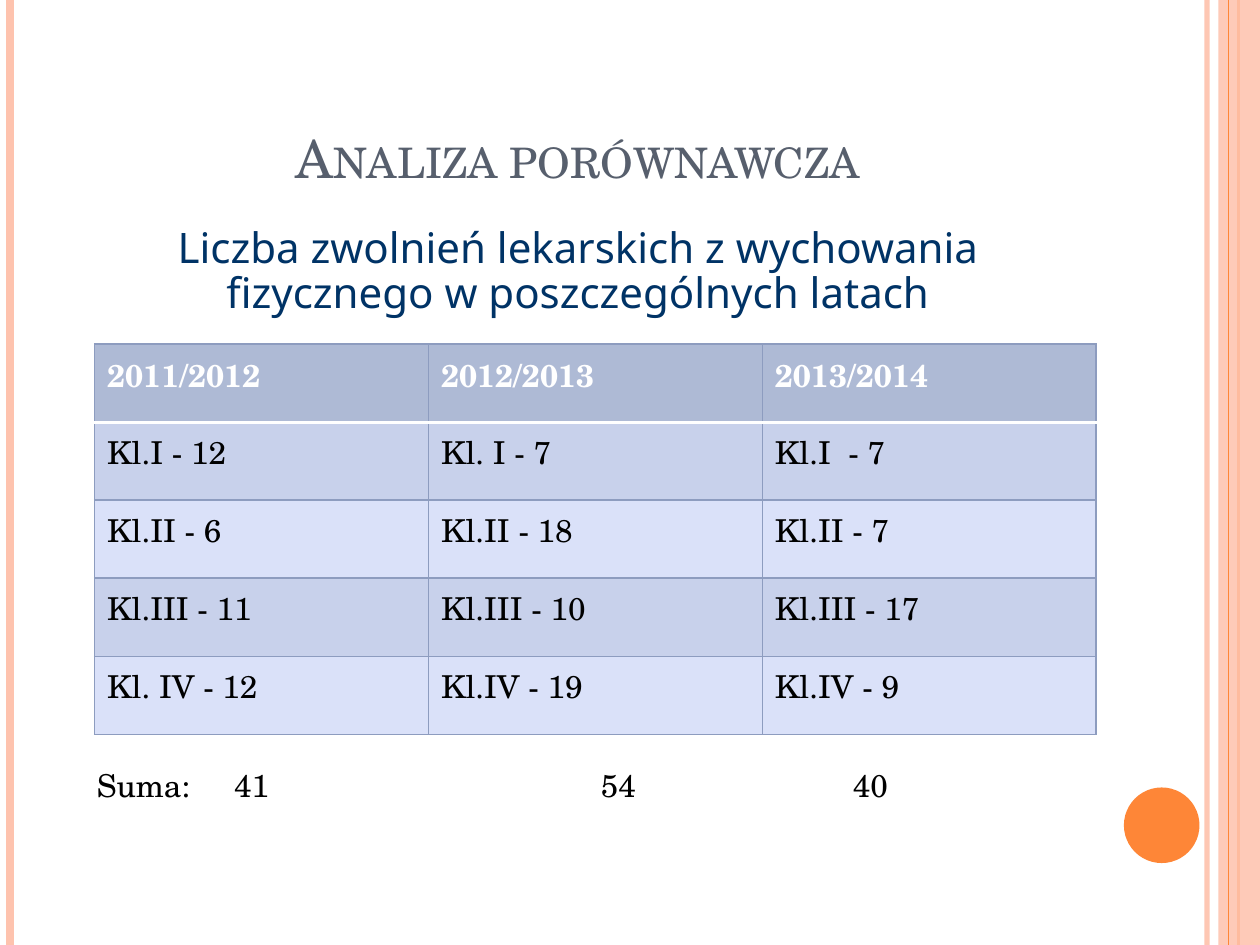
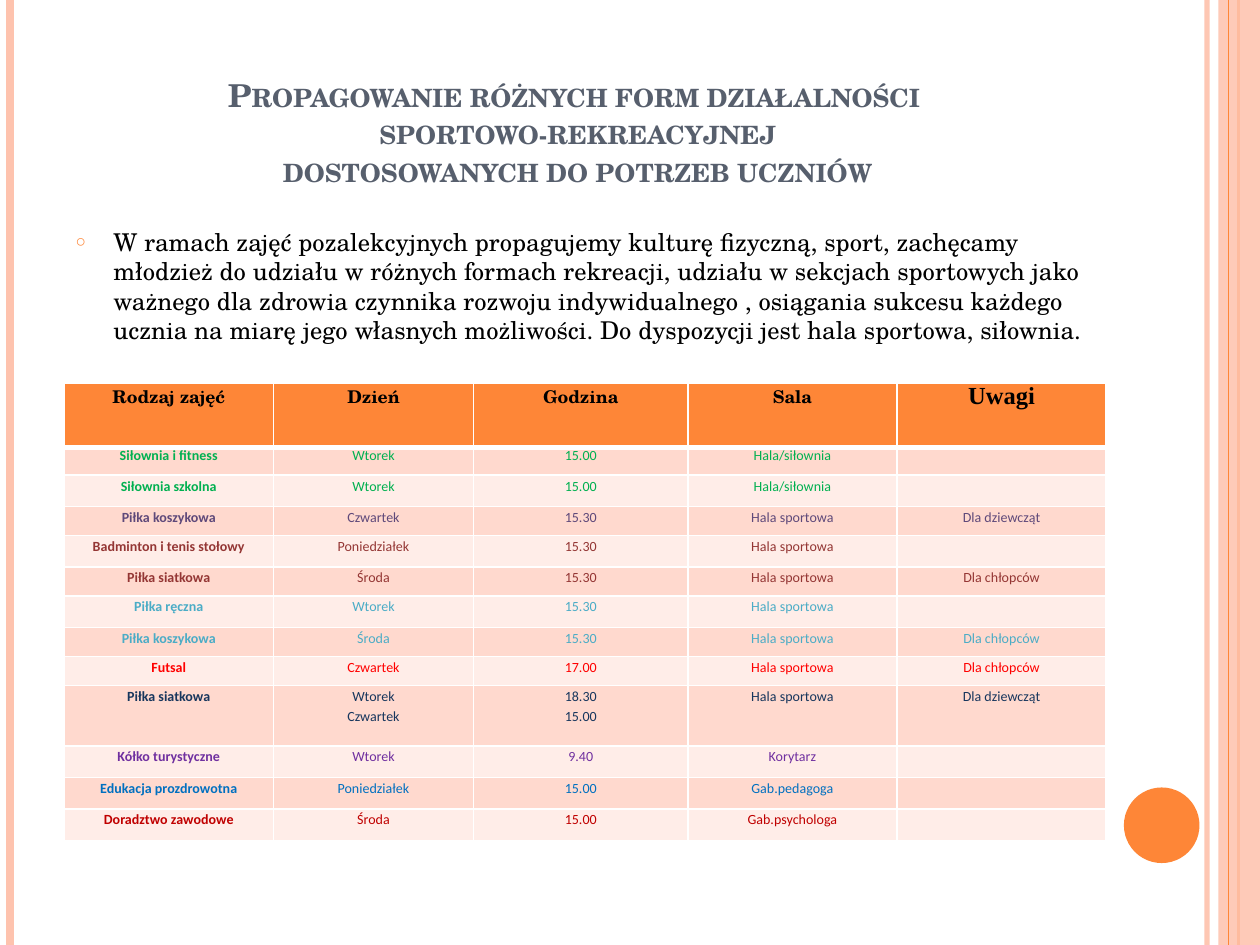
import pptx
import pptx.util
import pptx.dml.color
import pptx.enum.shapes
import pptx.enum.text
import pptx.oxml
import pptx.oxml.ns
from lxml import etree

Inches, Pt = pptx.util.Inches, pptx.util.Pt
qn = pptx.oxml.ns.qn
CENTER = pptx.enum.text.PP_ALIGN.CENTER
SERIF = "TeX Gyre Schola"
ORANGE, PEACH, SLATE = "FE8637", "FEC3AE", "575F6D"
BLUE, WHITE, BLACK = "8D9CBF", "FFFFFF", "000000"


def put(par, words, size, color, face=SERIF, bold=False):
    """Add one formatted run to a paragraph."""
    run = par.add_run()
    run.text = words
    run.font.size, run.font.name, run.font.bold = Pt(size), face, bold
    run.font.color.rgb = pptx.dml.color.RGBColor.from_string(color)
    return run


def dress(cell, fill, edges):
    """Fill a cell and draw its edges, given as {side: (colour, width)}."""
    cell.fill.solid()
    cell.fill.fore_color.rgb = pptx.dml.color.RGBColor.from_string(fill)
    props = cell._tc.get_or_add_tcPr()
    for n, side in enumerate(s for s in "LRTB" if s in edges):
        color, width = edges[side]
        line = etree.Element(qn("a:ln" + side), w=str(Pt(width)))
        paint = etree.SubElement(line, qn("a:solidFill"))
        etree.SubElement(paint, qn("a:srgbClr"), val=color)
        props.insert(n, line)


deck = pptx.Presentation()
deck.slide_width, deck.slide_height = Inches(10), Inches(7.5)
layout = deck.slide_layouts[1]
slides = [deck.slides.add_slide(layout) for _ in range(2)]

# Bands and disc: drawn once, then moved to the master
shapes = slides[0].shapes
kinds = pptx.enum.shapes.MSO_SHAPE
decor = [
    ("line", 9.58, PEACH, 3, 93),
    ("line", 0.08, PEACH, 4.5, 100),
    ("line", 9.83, ORANGE, 1.5, 100),
    (kinds.RECTANGLE, (9.67, 0, 0.33, 7.5), PEACH, 0, 87),
    ("line", 9.75, ORANGE, 0.75, 100),
    (kinds.OVAL, (8.92, 6.25, 0.6, 0.6), ORANGE, 0, 100),
]
for n, (kind, place, color, width, alpha) in enumerate(decor):
    rgb = pptx.dml.color.RGBColor.from_string(color)
    if kind == "line":
        item = shapes.add_connector(
            pptx.enum.shapes.MSO_CONNECTOR.STRAIGHT,
            Inches(place), 0, Inches(place), Inches(7.5))
        item.line.color.rgb = rgb
        item.line.width = Pt(width)
        etree.SubElement(item.element.spPr, qn("a:effectLst"))
    else:
        item = shapes.add_shape(kind, *map(Inches, place))
        item.fill.solid()
        item.fill.fore_color.rgb = rgb
        item.line.fill.background()
        item.shadow.inherit = False
    if alpha < 100:
        tone = next(item.element.iter(qn("a:srgbClr")))
        etree.SubElement(tone, qn("a:alpha"), val=str(alpha * 1000))
    next(item.element.iter(qn("p:cNvPr"))).set("id", str(20 + n))
    deck.slide_master.shapes.element.insert(2 + n, item.element)

# Titles and body places
heads = [
    ("Analiza porównawcza", 30, False, 8.17),
    ("Propagowanie różnych form działalności \vsportowo-rekreacyjnej\v"
     "dostosowanych do potrzeb uczniów", 18, True, 8.44),
]
for slide, (words, size, bold, wide) in zip(slides, heads):
    title, body = slide.placeholders
    for box, place in ((title, (0.5, 0.3, 8.17, 1.25)),
                       (body, (0.5, 1.75, wide, 5.33))):
        box.left, box.top, box.width, box.height = map(Inches, place)
        box.text_frame.auto_size = pptx.enum.text.MSO_AUTO_SIZE.NONE
        box.text_frame.paragraphs[0].space_before = Pt(0)
    title.text_frame.vertical_anchor = pptx.enum.text.MSO_ANCHOR.BOTTOM
    par = title.text_frame.paragraphs[0]
    par.alignment = CENTER
    for n, part in enumerate(words.split("\v")):
        if n:
            par.add_line_break()
        run = put(par, part, size, SLATE, bold=bold)
        run.font._element.set("cap", "small")

# Slide 1: exemptions by year
par = slides[0].placeholders[1].text_frame.paragraphs[0]
par.alignment, par.line_spacing = CENTER, 0.9
props = par._p.get_or_add_pPr()
props.set("marL", "0")
props.set("indent", "0")
etree.SubElement(props, qn("a:buNone"))
put(par, "Liczba zwolnień lekarskich z wychowania fizycznego "
    "w poszczególnych latach", 24, "003366", "Noto Sans")

years = [
    ("2011/2012", "2012/2013", "2013/2014"),
    ("Kl.I - 12", "Kl. I - 7", "Kl.I  - 7"),
    ("Kl.II - 6", "Kl.II - 18", "Kl.II - 7"),
    ("Kl.III - 11", "Kl.III - 10", "Kl.III - 17"),
    ("Kl. IV - 12", "Kl.IV - 19", "Kl.IV - 9"),
]
grid = shapes.add_table(5, 3, Inches(0.75), Inches(2.73),
                        Inches(7.95), Inches(3.1)).table
grid.horz_banding = False
for r, row in enumerate(years):
    grid.rows[r].height = Inches(0.62)
    for c, words in enumerate(row):
        cell = grid.cell(r, c)
        edges = dict.fromkeys("LRTB", (BLUE, 1))
        if r == 0:
            edges["B"] = (WHITE, 2)
        elif r == 1:
            edges["T"] = (WHITE, 2)
        fill = "AEBAD5" if r == 0 else ("DAE1F9", "C8D1EB")[r % 2]
        dress(cell, fill, edges)
        put(cell.text_frame.paragraphs[0], words, 18,
            BLACK if r else WHITE, bold=r == 0)

box = shapes.add_textbox(Inches(0.67), Inches(6.03), Inches(8.11), Inches(0.71))
box.text_frame.word_wrap = True
par = box.text_frame.paragraphs[0]
tabs = etree.SubElement(par._p.get_or_add_pPr(), qn("a:tabLst"))
for stop in (1.09, 4, 6):
    etree.SubElement(tabs, qn("a:tab"), pos=str(Inches(stop)), algn="l")
put(par, "Suma:\t41\t54\t40", 18, BLACK)

# Slide 2: timetable of activities
par = slides[1].placeholders[1].text_frame.paragraphs[0]
props = par._p.get_or_add_pPr()
props.set("marL", str(Inches(0.3)))
props.set("indent", str(Inches(-0.3)))
tint = etree.SubElement(props, qn("a:buClr"))
etree.SubElement(tint, qn("a:srgbClr"), val=ORANGE)
etree.SubElement(props, qn("a:buSzPct"), val="70000")
etree.SubElement(props, qn("a:buChar"), char="○")
put(par, "W ramach zajęć pozalekcyjnych propagujemy kulturę fizyczną, sport, "
    "zachęcamy młodzież do udziału w różnych formach rekreacji, udziału w "
    "sekcjach sportowych jako ważnego dla zdrowia czynnika rozwoju "
    "indywidualnego , osiągania sukcesu każdego ucznia na miarę jego własnych "
    "możliwości. Do dyspozycji jest hala sportowa, siłownia.", 14, BLACK)

GREEN, PLUM, BRICK, AQUA = "00B050", "5F497A", "943634", "4BACC6"
HALL, GIRLS, BOYS = "Hala sportowa", "Dla dziewcząt", "Dla chłopców"
plan = [
    (0.51, BLACK, "Rodzaj zajęć", "Dzień", "Godzina", "Sala", "Uwagi"),
    (0.22, GREEN, "Siłownia i fitness", "Wtorek", "15.00", "Hala/siłownia", ""),
    (0.25, GREEN, "Siłownia szkolna", "Wtorek", "15.00", "Hala/siłownia", ""),
    (0.23, PLUM, "Piłka koszykowa", "Czwartek", "15.30", HALL, GIRLS),
    (0.25, BRICK, "Badminton i tenis stołowy", "Poniedziałek", "15.30", HALL, ""),
    (0.23, BRICK, "Piłka siatkowa", "Środa", "15.30", HALL, BOYS),
    (0.25, AQUA, "Piłka ręczna", "Wtorek", "15.30", HALL, ""),
    (0.23, AQUA, "Piłka koszykowa", "Środa", "15.30", HALL, BOYS),
    (0.23, "FF0000", "Futsal", "Czwartek", "17.00", HALL, BOYS),
    (0.48, "17365D", "Piłka siatkowa", "Wtorek\nCzwartek", "18.30\n15.00",
     HALL, GIRLS),
    (0.25, "7030A0", "Kółko turystyczne", "Wtorek", "9.40", "Korytarz", ""),
    (0.25, "0070C0", "Edukacja prozdrowotna", "Poniedziałek", "15.00",
     "Gab.pedagoga", ""),
    (0.25, "C00000", "Doradztwo zawodowe", "Środa", "15.00",
     "Gab.psychologa", ""),
]
grid = slides[1].shapes.add_table(len(plan), 5, Inches(0.51), Inches(3.04),
                                  Inches(8.27), Inches(3.62)).table
grid.horz_banding = False
for col, wide in zip(grid.columns, (1.66, 1.59, 1.7, 1.66, 1.66)):
    col.width = Inches(wide)
for r, (high, color, *row) in enumerate(plan):
    grid.rows[r].height = Inches(high)
    for c, words in enumerate(row):
        cell = grid.cell(r, c)
        cell.margin_left = cell.margin_right = Inches(0.07)
        cell.margin_top = cell.margin_bottom = 0
        edges = dict.fromkeys("LRTB", (WHITE, 1))
        if r < 2:
            edges["TB"[r == 0]] = (WHITE, 3)
        dress(cell, ("FFEDE8", "FFD9CE")[r % 2] if r else ORANGE, edges)
        size, face = (8, "Calibri") if r else (10, SERIF)
        if words == "Uwagi":
            size, face = 14, "Times New Roman"
        for n, part in enumerate(words.split("\n")):
            frame = cell.text_frame
            par = frame.add_paragraph() if n else frame.paragraphs[0]
            par.alignment = CENTER
            if r > 1:
                par.line_spacing = 1.15
            if part:
                put(par, part, size, color, face, r == 0 or c == 0)
            else:
                etree.SubElement(par._p, qn("a:endParaRPr"), sz="800")

deck.save("out.pptx")
